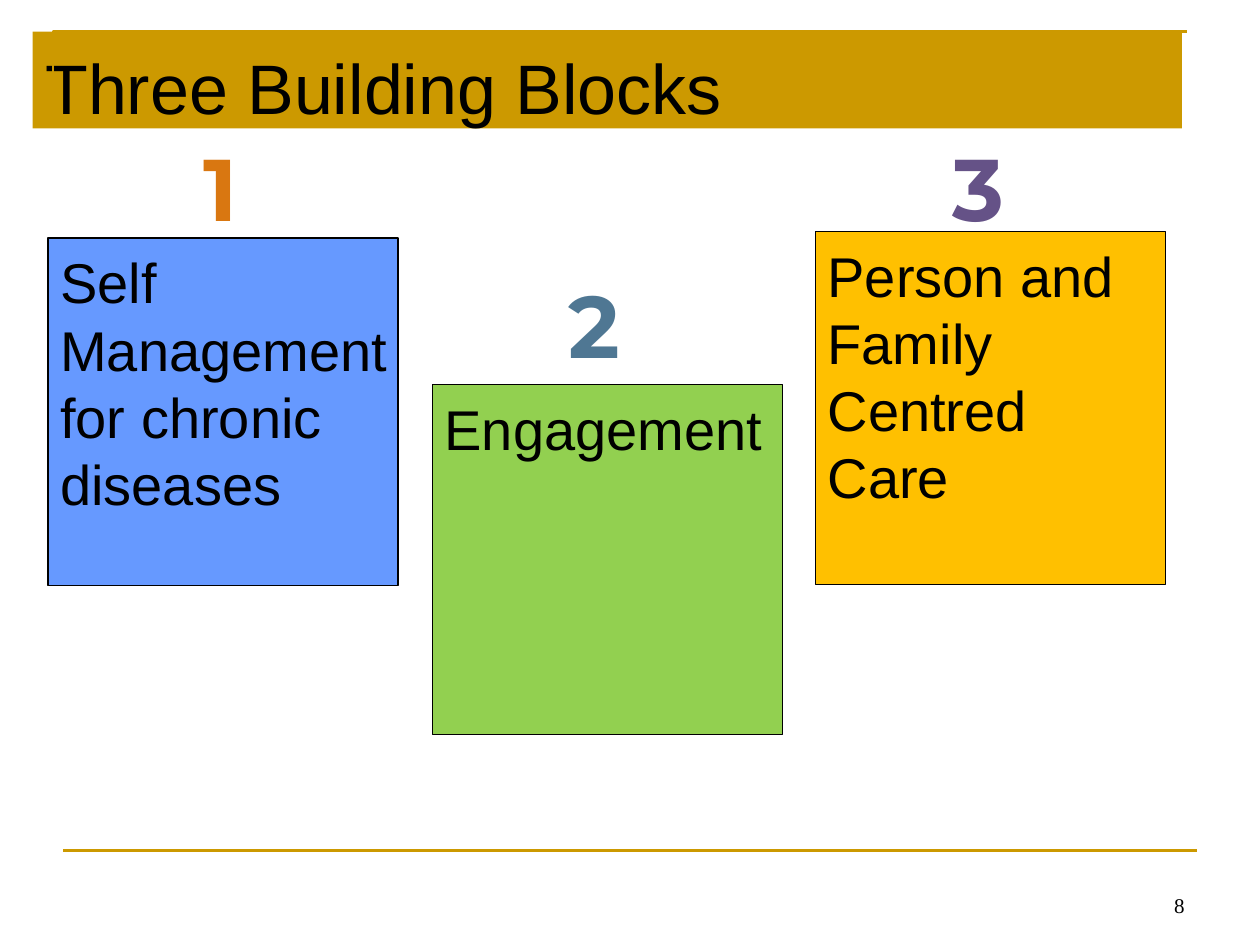
from pptx import Presentation
from pptx.dml.color import RGBColor
from pptx.enum.shapes import MSO_CONNECTOR, MSO_SHAPE
from pptx.enum.text import MSO_ANCHOR, PP_ALIGN
from pptx.oxml.ns import qn
from pptx.util import Pt
from lxml.etree import SubElement

PX = 9144
COLORS = {
    "gold": "CC9900", "black": "000000", "white": "FFFFFF",
    "blue": "6699FF", "green": "92D050", "amber": "FFC000",
    "orange": "D97711", "teal": "4F7793", "purple": "655287",
}
BLOCKS = [
    ("1", "Self\nManagement\nfor chronic\ndiseases", "blue", "orange",
     (38, 189, 278, 276), (147, 102)),
    ("2", "Engagement", "green", "teal", (343, 305, 278, 278), (443, 211)),
    ("3", "Person and\nFamily\nCentred\nCare", "amber", "purple",
     (647, 184, 278, 280), (748, 102)),
]


def emu(*lengths):
    """Turn px lengths into EMU."""
    return [length * PX for length in lengths]


def color(name):
    """Look up a colour by name."""
    return RGBColor.from_string(COLORS[name])


def paint(part, fill):
    """Give a shape a solid fill."""
    part.fill.solid()
    part.fill.fore_color.rgb = color(fill)


def outline(part, name, width):
    """Give a shape or connector its line."""
    part.line.color.rgb = color(name)
    part.line.width = Pt(width)


def write(part, words, size, font="Arial", ink="black", align=PP_ALIGN.LEFT,
          margins=(10, 5, 10, 5), anchor=MSO_ANCHOR.TOP, wrap=True,
          bold=False, spacing=None):
    """Set the text of a shape and format its paragraphs and runs."""
    frame = part.text_frame
    frame.text = words
    frame.word_wrap = wrap
    frame.vertical_anchor = anchor
    (frame.margin_left, frame.margin_top,
     frame.margin_right, frame.margin_bottom) = emu(*margins)
    for paragraph in frame.paragraphs:
        paragraph.alignment = align
        paragraph.line_spacing = spacing
        for run in paragraph.runs:
            run.font.size = Pt(size)
            run.font.name = font
            run.font.bold = bold
            run.font.color.rgb = color(ink)


def add_rules(slide, left, top, width, height):
    """Draw the corner rule and the footer rule."""
    builder = slide.shapes.build_freeform(left, top + height, scale=PX)
    builder.add_line_segments([(left, top), (left + width, top)], close=False)
    corner = builder.convert_to_shape()
    corner.shadow.inherit = False
    corner.fill.background()
    outline(corner, "gold", 1.5)
    footer = slide.shapes.add_connector(
        MSO_CONNECTOR.STRAIGHT, *emu(left + 8, top + 650, left + width + 8, top + 650))
    outline(footer, "gold", 1.5)
    SubElement(footer._element.spPr, qn("a:effectLst"))


def add_title(slide, left, top, width, height):
    """Place the title on its gold banner."""
    title = slide.shapes.title
    title.left, title.top, title.width, title.height = emu(left, top, width, height)
    paint(title, "gold")
    write(title, "Three Building Blocks", 40, margins=(10, 10, 10, 0))


def add_block(slide, number, words, fill, ink, box, number_corner):
    """Place one building block and its number."""
    block = slide.shapes.add_shape(MSO_SHAPE.RECTANGLE, *emu(*box))
    block.shadow.inherit = False
    paint(block, fill)
    outline(block, "black", 0.75)
    write(block, words, 32, margins=(10, 8, 0, 5), spacing=Pt(38.3))
    numeral = slide.shapes.add_textbox(*emu(*number_corner, 56, 93))
    write(numeral, number, 50, "Montserrat", ink, PP_ALIGN.CENTER,
          (8, 4, 8, 4), wrap=False, bold=True)


def add_page_number(slide, left, top, width, height):
    """Place the page number at the lower right."""
    page = slide.shapes.add_textbox(*emu(left, top, width, height))
    write(page, "8", 12, "Times New Roman", align=PP_ALIGN.RIGHT,
          anchor=MSO_ANCHOR.BOTTOM)


def main():
    """Build and save the slide."""
    deck = Presentation()
    deck.slide_width, deck.slide_height = emu(1000, 750)
    slide = deck.slides.add_slide(deck.slide_layouts[5])
    add_rules(slide, 42, 25, 900, 67)
    add_title(slide, 26, 25, 912, 77)
    for block in BLOCKS:
        add_block(slide, *block)
    add_page_number(slide, 717, 683, 233, 50)
    deck.save("out.pptx")


if __name__ == "__main__":
    main()
